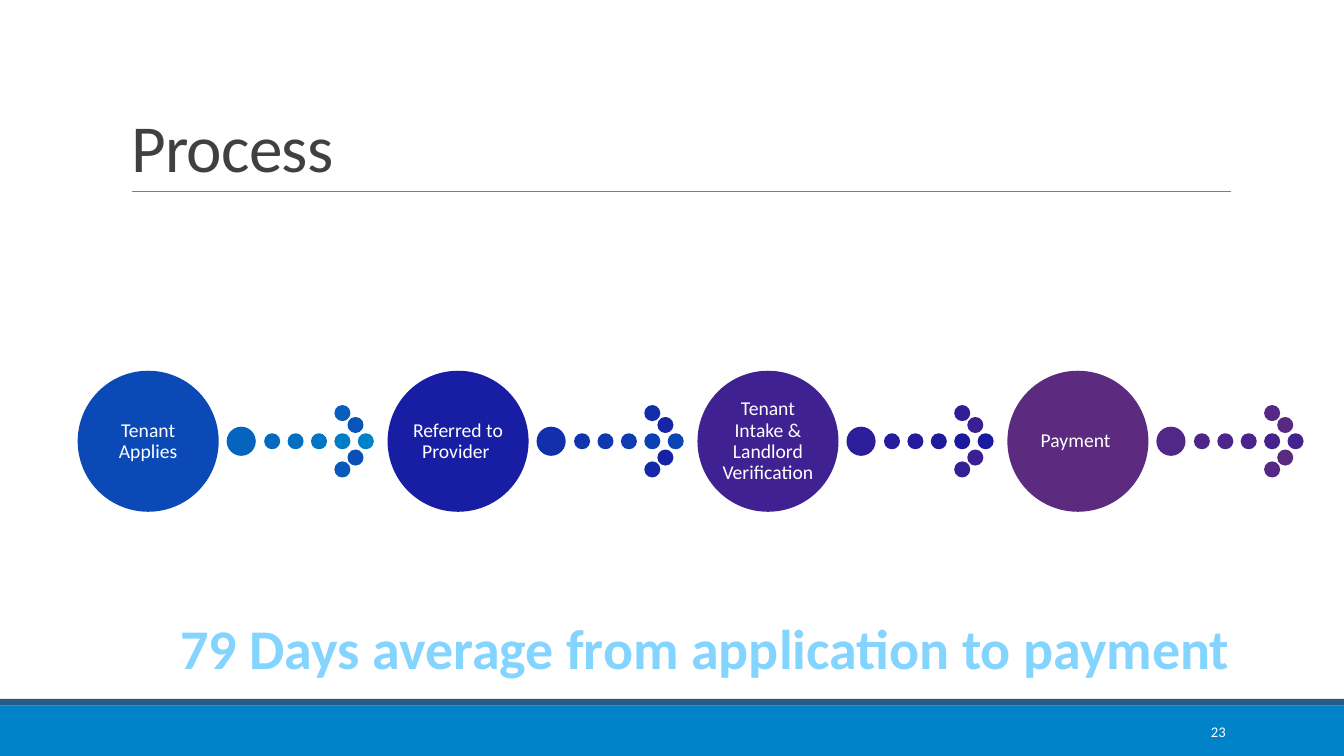
from colorsys import hls_to_rgb, rgb_to_hls

from lxml import etree
from pptx import Presentation
from pptx.dml.color import RGBColor
from pptx.enum.shapes import MSO_CONNECTOR, MSO_SHAPE
from pptx.enum.text import MSO_ANCHOR, MSO_AUTO_SIZE, PP_ALIGN
from pptx.oxml.ns import qn
from pptx.util import Cm, Pt

LINE = MSO_CONNECTOR.STRAIGHT
OVAL, RECT = MSO_SHAPE.OVAL, MSO_SHAPE.RECTANGLE
MIDDLE, BOTTOM = MSO_ANCHOR.MIDDLE, MSO_ANCHOR.BOTTOM
LEFT, CENTER, RIGHT = PP_ALIGN.LEFT, PP_ALIGN.CENTER, PP_ALIGN.RIGHT
NO_FIT = MSO_AUTO_SIZE.NONE

FONT = "Calibri"
COLORS = {
    "first": "0082C8",
    "last": "5C2B80",
    "bar": "0082C8",
    "strip": "285A83",
    "rule": "808080",
    "title": "404040",
    "claim": "83D4FF",
    "white": "FFFFFF",
}
WIDE, HIGH = 33.87, 19.05
STEPS = ["Tenant Applies", "Referred to Provider ",
         "Tenant Intake & Landlord Verification", "Payment "]
PITCH, DISC, DOT = 7.81, 3.51, 0.36
# Dots of one arrow: centre x from the disc's left, centre y from its middle, size
ARROW = [(7.24 - 0.59 * k, 0, DOT) for k in range(5)] + [
    (4.1, 0, 0.69),
    (6.65, -0.71, DOT), (6.65, 0.71, DOT),
    (6.98, -0.41, DOT), (6.98, 0.41, DOT),
]
TOTAL = len(STEPS) * (len(ARROW) + 1)


def blend(index):
    """Colour of a mark, moved evenly in hue, lightness and saturation."""
    ends = [rgb_to_hls(*(v / 255 for v in RGBColor.from_string(COLORS[key])))
            for key in ("first", "last")]
    part = index / (TOTAL - 1)
    mix = [a + (b - a) * part for a, b in zip(*ends)]
    return RGBColor(*(round(v * 255) for v in hls_to_rgb(*mix)))


def write(frame, text, size, color, align, anchor, bold=False):
    frame.vertical_anchor = anchor
    para = frame.paragraphs[0]
    para.alignment = align
    run = para.add_run()
    run.text = text
    font = run.font
    font.name, font.size, font.bold = FONT, Pt(size), bold
    font.color.rgb = RGBColor.from_string(COLORS[color])
    return para


def draw(slide, kind, box, color):
    shape = slide.shapes.add_shape(kind, *map(Cm, box))
    shape.shadow.inherit = False
    shape.fill.solid()
    shape.fill.fore_color.rgb = color
    shape.line.fill.background()
    return shape


def mark(slide, x, y, size, index):
    """Disc or dot centred on x, y."""
    color = blend(index)
    shape = draw(slide, OVAL, (x - size / 2, y - size / 2, size, size), color)
    shape.line.color.rgb = color
    shape.line.width = Pt(1.25)
    return shape


def frame_page(slide):
    for top, height, key in ((17.78, 1.27, "bar"), (17.61, 0.17, "strip")):
        draw(slide, RECT, (0, top, WIDE, height),
             RGBColor.from_string(COLORS[key]))
    rule = slide.shapes.add_connector(LINE, Cm(3.33), Cm(4.83),
                                      Cm(31.01), Cm(4.83))
    rule.line.color.rgb = RGBColor.from_string(COLORS["rule"])
    rule.line.width = Pt(0.5)
    etree.SubElement(rule._element.spPr, qn("a:effectLst"))


def head(slide, box, text):
    title = slide.shapes.title
    title.left, title.top, title.width, title.height = map(Cm, box)
    frame = title.text_frame
    frame.auto_size = NO_FIT
    para = write(frame, text, 48, "title", LEFT, BOTTOM)
    para.line_spacing = 0.85
    para.runs[0].font._element.set("spc", "-50")


def step(slide, left, middle, text, start):
    """Dotted arrow and its labelled disc, coloured from mark number start."""
    for k, (x, y, size) in enumerate(ARROW):
        mark(slide, left + x, middle + y, size, start + k)
    disc = mark(slide, left + DISC / 2, middle, DISC, start + len(ARROW))
    frame = disc.text_frame
    frame.word_wrap = True
    frame.margin_left = frame.margin_right = Cm(0.05)
    frame.margin_top = frame.margin_bottom = Cm(0.05)
    write(frame, text, 14, "white", CENTER, MIDDLE).line_spacing = 0.9


def flow(slide, left, middle):
    for k, text in enumerate(STEPS):
        step(slide, left + k * PITCH, middle, text, k * (len(ARROW) + 1))


def label(slide, box, text, size, color, align, wrap=True, bold=False):
    frame = slide.shapes.add_textbox(*map(Cm, box)).text_frame
    frame.word_wrap = wrap
    write(frame, text, size, color, align, MIDDLE, bold)


def main():
    deck = Presentation()
    deck.slide_width, deck.slide_height = Cm(WIDE), Cm(HIGH)
    slide = deck.slides.add_slide(deck.slide_layouts[5])
    frame_page(slide)
    head(slide, (3.05, 0.79, 27.94, 4.04), "Process")
    flow(slide, 1.98, 11.12)
    label(slide, (4.14, 15.32, 27.25, 1.96),
          "79 Days average from application to payment",
          40, "claim", CENTER, wrap=False, bold=True)
    label(slide, (27.51, 17.93, 3.63, 1.02), "23", 10.5, "white", RIGHT)
    deck.save("out.pptx")


if __name__ == "__main__":
    main()
